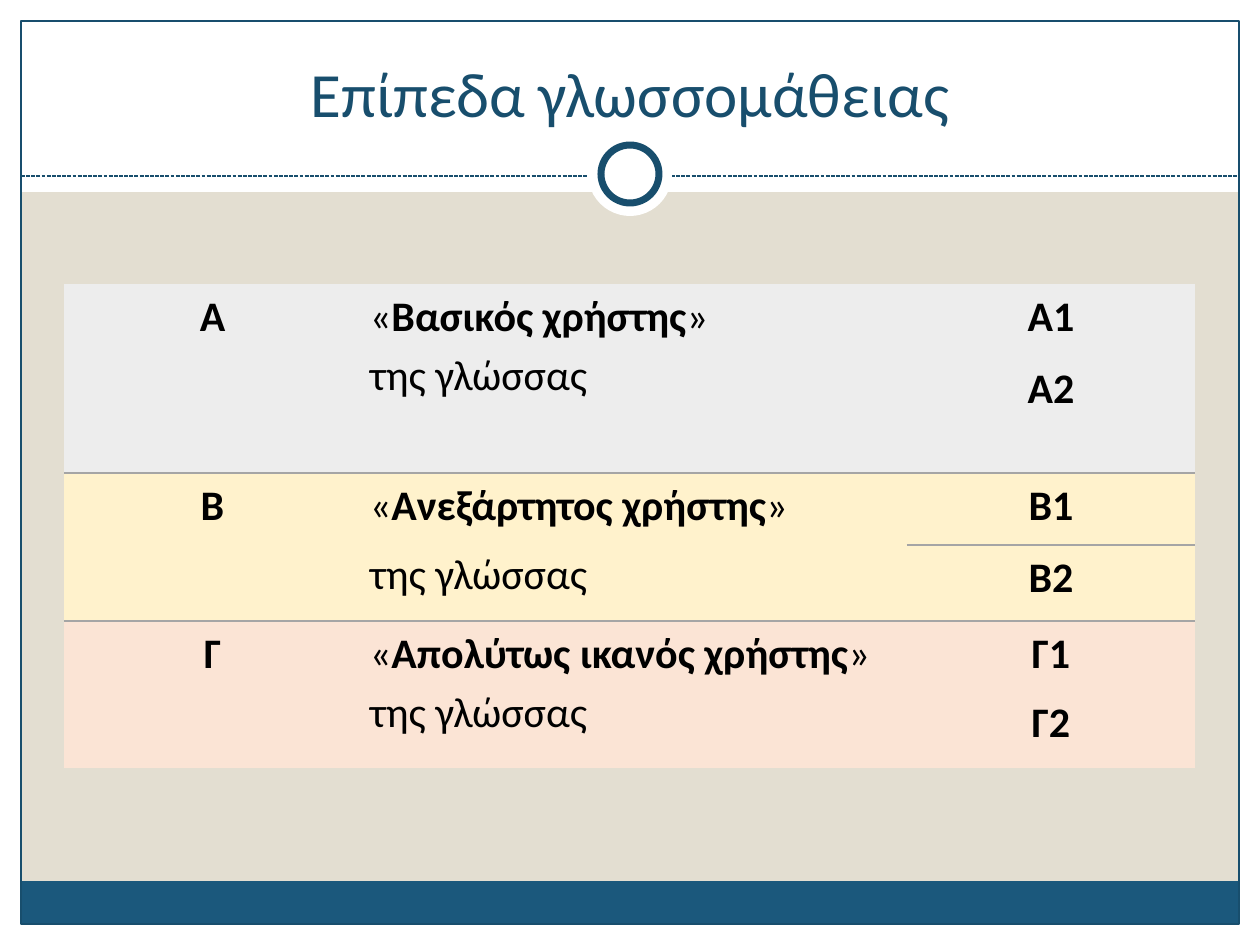
from lxml import etree
from pptx import Presentation
from pptx.dml.color import RGBColor
from pptx.enum.dml import MSO_LINE
from pptx.enum.shapes import MSO_CONNECTOR, MSO_SHAPE
from pptx.enum.text import MSO_ANCHOR, PP_ALIGN
from pptx.oxml.ns import qn
from pptx.util import Pt

RECTANGLE, OVAL = MSO_SHAPE.RECTANGLE, MSO_SHAPE.OVAL
STRAIGHT = MSO_CONNECTOR.STRAIGHT
DASH = MSO_LINE.SQUARE_DOT
BOTTOM = MSO_ANCHOR.BOTTOM
LEFT, CENTER, JUSTIFY = PP_ALIGN.LEFT, PP_ALIGN.CENTER, PP_ALIGN.JUSTIFY

WIDTH, HEIGHT, MARGIN = 1260, 945, 21
FONT = "Calibri"
NO_STYLE = "{2D5ABB26-0587-4C30-8999-92F81FD0307C}"

SAND = RGBColor(0xE3, 0xDE, 0xD1)
WHITE = RGBColor(0xFF, 0xFF, 0xFF)
BLACK = RGBColor(0, 0, 0)
BLUE = RGBColor(0x1B, 0x58, 0x7C)
NAVY = RGBColor(0x18, 0x4E, 0x6D)
RULE = RGBColor(0xA5, 0xA5, 0xA5)
GREY = RGBColor(0xED, 0xED, 0xED)
YELLOW = RGBColor(0xFF, 0xF2, 0xCC)
PEACH = RGBColor(0xFB, 0xE4, 0xD5)

COLUMN_WIDTHS = [297, 546, 288]
ROW_HEIGHTS = [72, 117, 72, 76, 147]

# A paragraph is (alignment, space before, [(text, bold), ...])
LANGUAGE = [("της γλώσσας", False)]


def px(length):
    return round(length * 914400 / 126)


def user(name, ending="»"):
    return [("«", False), (name, True), (ending, False)]


def label(text, space=0):
    return (CENTER, space, [(text, True)])


# Each level: first row, rows, colour, user paragraphs, sublevels by row
LEVELS = [
    ("Α", 0, 2, GREY,
     [(JUSTIFY, 6, user("Βασικός χρήστης", "» ")), (JUSTIFY, 0, LANGUAGE)],
     [[label("Α1")], [label("Α2")]]),
    ("Β", 2, 2, YELLOW,
     [(LEFT, 6, user("Ανεξάρτητος χρήστης")), (LEFT, 6, LANGUAGE)],
     [[label("Β1")], [label("Β2")]]),
    ("Γ", 4, 1, PEACH,
     [(LEFT, 6, user("Απολύτως ικανός χρήστης", "» της γλώσσας"))],
     [[label("Γ1", 6), label("Γ2", 6)]]),
]


def add_shape(slide, kind, box, fill=None, line=None, weight=0.75):
    shape = slide.shapes.add_shape(kind, *map(px, box))
    shape.shadow.inherit = False
    if fill is None:
        shape.fill.background()
    else:
        shape.fill.solid()
        shape.fill.fore_color.rgb = fill
    if line is None:
        shape.line.fill.background()
    else:
        shape.line.color.rgb = line
        shape.line.width = Pt(weight)


def add_dashed_line(slide, left, right, top):
    line = slide.shapes.add_connector(STRAIGHT, px(left), px(top), px(right), px(top))
    line.line.color.rgb = NAVY
    line.line.width = Pt(0.75)
    line.line.dash_style = DASH
    etree.SubElement(line._element.spPr, qn("a:effectLst"))


def add_run(paragraph, text, size, color, bold=False):
    run = paragraph.add_run()
    run.text = text
    run.font.name = FONT
    run.font.size = Pt(size)
    run.font.bold = bold
    run.font.color.rgb = color


def add_title(slide, text, box):
    frame = slide.shapes.add_textbox(*map(px, box)).text_frame
    frame.word_wrap = True
    frame.vertical_anchor = BOTTOM
    paragraph = frame.paragraphs[0]
    paragraph.alignment = CENTER
    add_run(paragraph, text, 36, NAVY)


def fill_cell(cell, paragraphs):
    frame = cell.text_frame
    for index, (alignment, space, runs) in enumerate(paragraphs):
        paragraph = frame.add_paragraph() if index else frame.paragraphs[0]
        paragraph.alignment = alignment
        paragraph.line_spacing = 1.15
        paragraph.space_before = Pt(space)
        for text, bold in runs:
            add_run(paragraph, text, 24, BLACK, bold)


def format_cell(cell, color, edges):
    cell.margin_left = cell.margin_right = px(9)
    cell.margin_top = cell.margin_bottom = 0
    properties = cell._tc.get_or_add_tcPr()
    for edge in edges:
        border = etree.SubElement(properties, qn("a:" + edge), w=str(Pt(1.5)))
        fill = etree.SubElement(border, qn("a:solidFill"))
        etree.SubElement(fill, qn("a:srgbClr"), val=str(RULE))
    cell.fill.solid()
    cell.fill.fore_color.rgb = color


def add_levels_table(slide, left, top):
    table = slide.shapes.add_table(
        len(ROW_HEIGHTS), len(COLUMN_WIDTHS), px(left), px(top),
        px(sum(COLUMN_WIDTHS)), px(sum(ROW_HEIGHTS))).table
    table.first_row = table.horz_banding = False
    table._tbl.tblPr.find(qn("a:tableStyleId")).text = NO_STYLE
    for column, width in zip(table.columns, COLUMN_WIDTHS):
        column.width = px(width)
    for row, height in zip(table.rows, ROW_HEIGHTS):
        row.height = px(height)

    for name, first, count, color, description, sublevels in LEVELS:
        last = first + count - 1
        # Rules separate the levels only
        for row in range(first, last + 1):
            edges = ["lnT"] if row == first and first > 0 else []
            if row == last and last < len(ROW_HEIGHTS) - 1:
                edges.append("lnB")
            for column in range(len(COLUMN_WIDTHS)):
                format_cell(table.cell(row, column), color, edges)
            fill_cell(table.cell(row, 2), sublevels[row - first])
        for column, paragraphs in enumerate([[label(name, 6)], description]):
            if count > 1:
                table.cell(first, column).merge(table.cell(last, column))
            fill_cell(table.cell(first, column), paragraphs)


def main():
    presentation = Presentation()
    presentation.slide_width, presentation.slide_height = px(WIDTH), px(HEIGHT)
    slide = presentation.slides.add_slide(presentation.slide_layouts[6])
    slide.background.fill.solid()
    slide.background.fill.fore_color.rgb = SAND

    # White margins and header
    right, bottom = WIDTH - MARGIN, HEIGHT - MARGIN
    for box in [(0, bottom, WIDTH, MARGIN), (0, 0, WIDTH, 192),
                (0, 0, MARGIN, HEIGHT), (right, 0, MARGIN, HEIGHT)]:
        add_shape(slide, RECTANGLE, box, WHITE)

    # Footer band, frame and header rule
    inner = right - MARGIN
    add_shape(slide, RECTANGLE, (MARGIN, 881, inner, 43), BLUE)
    add_shape(slide, RECTANGLE, (MARGIN, MARGIN, inner, bottom - MARGIN), line=NAVY)
    add_dashed_line(slide, MARGIN, right, 176)

    # Ring on the header rule
    add_shape(slide, OVAL, (588, 132, 84, 84), WHITE)
    add_shape(slide, OVAL, (601, 145, 58, 58), WHITE, NAVY, 4)

    add_title(slide, "Επίπεδα γλωσσομάθειας", (42, 32, 1176, 104))
    add_levels_table(slide, 64, 284)
    presentation.save("out.pptx")


if __name__ == "__main__":
    main()
